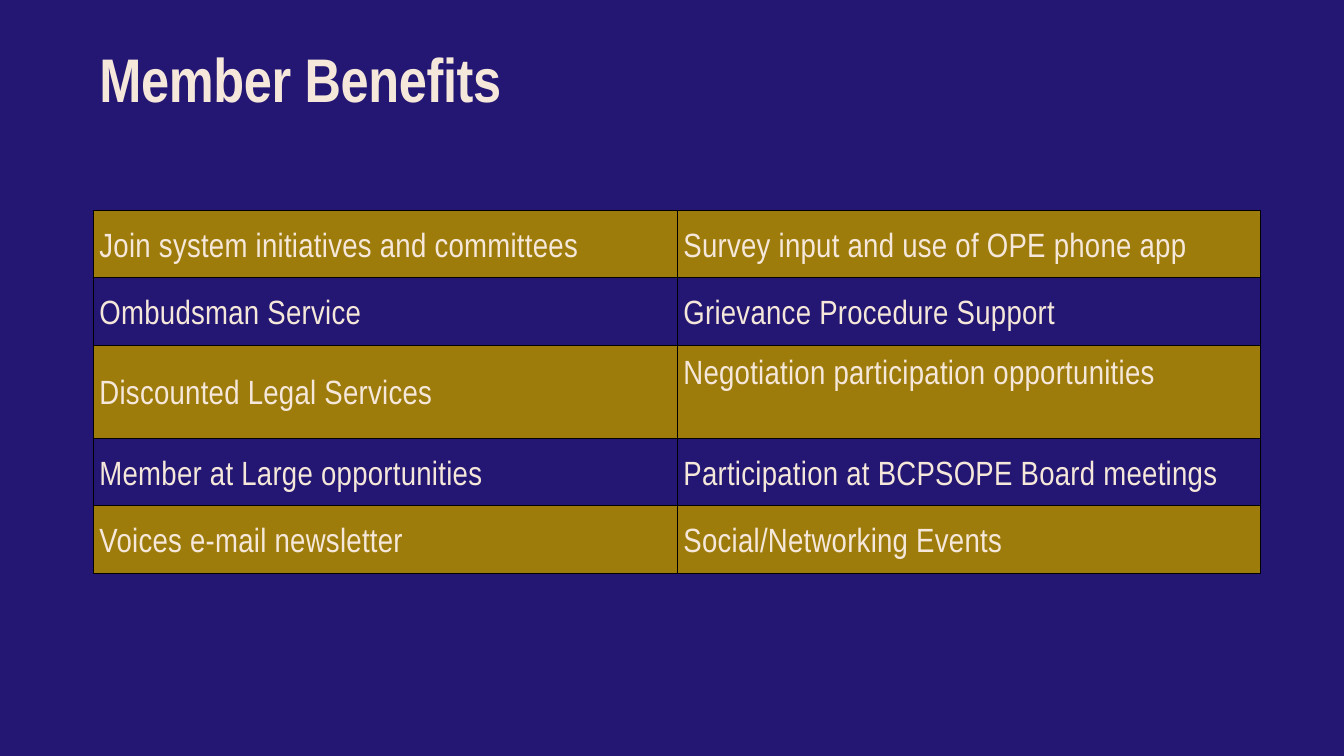
"""Build the Member Benefits slide: a title above a banded two-column table."""
from dataclasses import dataclass

from lxml import etree
from pptx import Presentation
from pptx.dml.color import RGBColor
from pptx.enum.text import MSO_ANCHOR, MSO_AUTO_SIZE, PP_ALIGN
from pptx.oxml.ns import qn
from pptx.slide import Slide
from pptx.table import _Cell
from pptx.text.text import TextFrame
from pptx.util import Pt

TOP, MIDDLE = MSO_ANCHOR.TOP, MSO_ANCHOR.MIDDLE
LEFT = PP_ALIGN.LEFT
NO_FIT = MSO_AUTO_SIZE.NONE


@dataclass(frozen=True)
class Style:
    size: float
    line: float
    track: int
    bold: bool


@dataclass(frozen=True)
class Theme:
    font: str = "Arial Narrow"
    navy: str = "241773"
    gold: str = "9E7C0C"
    cream: str = "F5E8DA"
    edge: str = "000000"
    edge_width: float = 0.37
    head: Style = Style(66, 71.3, -40, True)
    body: Style = Style(36, 43.2, 30, False)


@dataclass(frozen=True)
class Row:
    left: str
    right: str
    height: float = 72
    right_anchor: MSO_ANCHOR = MIDDLE


THEME = Theme()
PAGE = (1440, 810)
TITLE_BOX = (106.56, 51.84, 1227.6, 144)
TABLE_LEFT, TABLE_TOP, COL_WIDTH = 99.36, 225.36, 625.68
CELL_PAD = 7.2
ROWS = [
    Row("Join system initiatives and committees", "Survey input and use of OPE phone app"),
    Row("Ombudsman Service", "Grievance Procedure Support"),
    Row("Discounted Legal Services", "Negotiation participation opportunities", 100.4, TOP),
    Row("Member at Large opportunities", "Participation at BCPSOPE Board meetings"),
    Row("Voices e-mail newsletter", "Social/Networking Events"),
]


def color(code: str) -> RGBColor:
    return RGBColor.from_string(code)


def write(frame: TextFrame, text: str, style: Style) -> None:
    para = frame.paragraphs[0]
    para.alignment = LEFT
    para.line_spacing = Pt(style.line)
    run = para.add_run()
    run.text = text
    font = run.font
    font.name, font.size, font.bold = THEME.font, Pt(style.size), style.bold
    font.color.rgb = color(THEME.cream)
    run._r.get_or_add_rPr().set("spc", str(style.track))


def add_edges(cell: _Cell) -> None:
    props = cell._tc.get_or_add_tcPr()
    for side in ("lnL", "lnR", "lnT", "lnB"):
        line = etree.SubElement(props, qn(f"a:{side}"), w=str(int(Pt(THEME.edge_width))))
        fill = etree.SubElement(line, qn("a:solidFill"))
        etree.SubElement(fill, qn("a:srgbClr"), val=THEME.edge)


def fill_cell(cell: _Cell, text: str, shade: str, anchor: MSO_ANCHOR) -> None:
    cell.margin_left = cell.margin_right = Pt(CELL_PAD)
    cell.margin_top = cell.margin_bottom = Pt(CELL_PAD)
    cell.vertical_anchor = anchor
    add_edges(cell)
    cell.fill.solid()
    cell.fill.fore_color.rgb = color(shade)
    write(cell.text_frame, text, THEME.body)


def add_title(slide: Slide, text: str) -> None:
    title = slide.shapes.title
    title.left, title.top, title.width, title.height = map(Pt, TITLE_BOX)
    frame = title.text_frame
    frame.margin_left = frame.margin_right = frame.margin_top = frame.margin_bottom = 0
    frame.auto_size = NO_FIT
    frame.word_wrap = True
    frame.vertical_anchor = TOP
    write(frame, text, THEME.head)


def add_grid(slide: Slide, rows: list[Row]) -> None:
    height = sum(row.height for row in rows)
    table = slide.shapes.add_table(
        len(rows), 2, Pt(TABLE_LEFT), Pt(TABLE_TOP), Pt(2 * COL_WIDTH), Pt(height)
    ).table
    table.first_row = table.horz_banding = False
    for col in table.columns:
        col.width = Pt(COL_WIDTH)
    for i, row in enumerate(rows):
        table.rows[i].height = Pt(row.height)
        shade = THEME.navy if i % 2 else THEME.gold
        fill_cell(table.cell(i, 0), row.left, shade, MIDDLE)
        fill_cell(table.cell(i, 1), row.right, shade, row.right_anchor)


def main() -> None:
    deck = Presentation()
    deck.slide_width, deck.slide_height = map(Pt, PAGE)
    slide = deck.slides.add_slide(deck.slide_layouts.get_by_name("Title Only"))
    back = slide.background.fill
    back.solid()
    back.fore_color.rgb = color(THEME.navy)
    add_title(slide, "Member Benefits")
    add_grid(slide, ROWS)
    deck.save("out.pptx")


if __name__ == "__main__":
    main()
